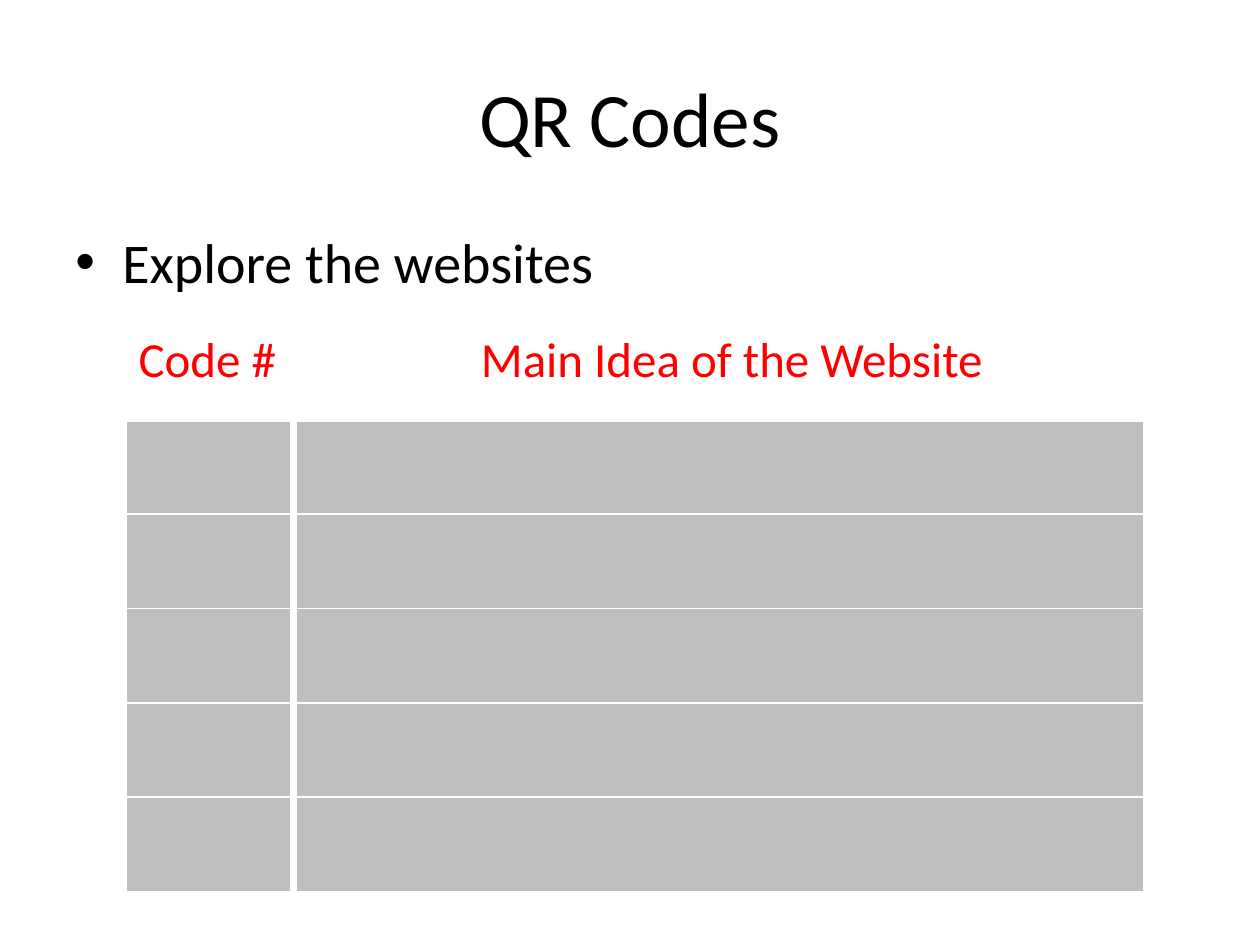
import pptx
import pptx.util
import pptx.dml.color
import pptx.enum.text
import pptx.oxml.ns
import lxml.etree

SCALE = 914400 // 126
FACE = "Calibri"
HUES = {"ink": "000000", "head": "FF0000", "cell": "BFBFBF", "rule": "FFFFFF"}
HEADS = ["Code #", "Main Idea of the Website"]
WIDTHS = [165, 853]
ROWS = 6


def px(n):
    return pptx.util.Emu(n * SCALE)


def hue(name):
    return pptx.dml.color.RGBColor.from_string(HUES[name])


def sub(node, tag, **attrs):
    return lxml.etree.SubElement(node, pptx.oxml.ns.qn(tag), **attrs)


def place(shape, x, y, w, h):
    shape.left, shape.top, shape.width, shape.height = map(px, (x, y, w, h))


def style(para, size, color):
    for run in para.runs:
        font = run.font
        font.name = FACE
        font.size = pptx.util.Pt(size)
        font.bold = False
        font.color.rgb = hue(color)


def add_title(slide, text):
    title = slide.shapes.title
    place(title, 63, 38, 1134, 158)
    frame = title.text_frame
    frame.text = text
    frame.vertical_anchor = pptx.enum.text.MSO_ANCHOR.MIDDLE
    para = frame.paragraphs[0]
    para.alignment = pptx.enum.text.PP_ALIGN.CENTER
    style(para, 44, "ink")


def add_bullet(slide, text):
    box = slide.shapes.add_textbox(px(63), px(221), px(1134), px(624))
    frame = box.text_frame
    frame.word_wrap = True
    frame.text = text
    para = frame.paragraphs[0]
    para.space_before = pptx.util.Pt(6.4)
    style(para, 32, "ink")
    props = para._p.get_or_add_pPr()
    props.set("marL", str(px(47)))
    props.set("indent", str(px(-47)))
    sub(props, "a:buFont", typeface="Arial")
    sub(props, "a:buChar", char="•")


def edge(cell, side, width):
    props = cell._tc.get_or_add_tcPr()
    line = sub(props, "a:ln" + side, w=str(pptx.util.Pt(width)))
    fill = sub(line, "a:solidFill")
    sub(fill, "a:srgbClr", val=HUES["rule"])


def paint(cell, row):
    for side in "LRTB":
        thick = (row, side) in ((0, "B"), (1, "T"))
        edge(cell, side, 3 if thick else 1)
    cell.fill.solid()
    cell.fill.fore_color.rgb = hue("cell" if row else "rule")


def add_grid(slide):
    frame = slide.shapes.add_table(
        ROWS, len(WIDTHS), px(126), px(325), px(sum(WIDTHS)), px(567))
    grid = frame.table
    for col, width in zip(grid.columns, WIDTHS):
        col.width = px(width)
    for row in range(ROWS):
        for col in range(len(WIDTHS)):
            paint(grid.cell(row, col), row)
    for col, text in enumerate(HEADS):
        cell = grid.cell(0, col)
        cell.text = text
        style(cell.text_frame.paragraphs[0], 28, "head")
    grid.cell(0, 1).margin_left = px(190)


def add_rule(slide):
    rule = slide.shapes.add_connector(
        pptx.enum.shapes.MSO_CONNECTOR.STRAIGHT,
        px(294), px(325), px(294), px(892))
    rule.line.color.rgb = hue("rule")
    rule.line.width = pptx.util.Pt(3)
    sub(rule._element.spPr, "a:effectLst")


def main():
    deck = pptx.Presentation()
    deck.slide_width, deck.slide_height = px(1260), px(945)
    slide = deck.slides.add_slide(deck.slide_layouts[5])
    add_title(slide, "QR Codes")
    add_bullet(slide, "Explore the websites")
    add_grid(slide)
    add_rule(slide)
    deck.save("out.pptx")


if __name__ == "__main__":
    main()
